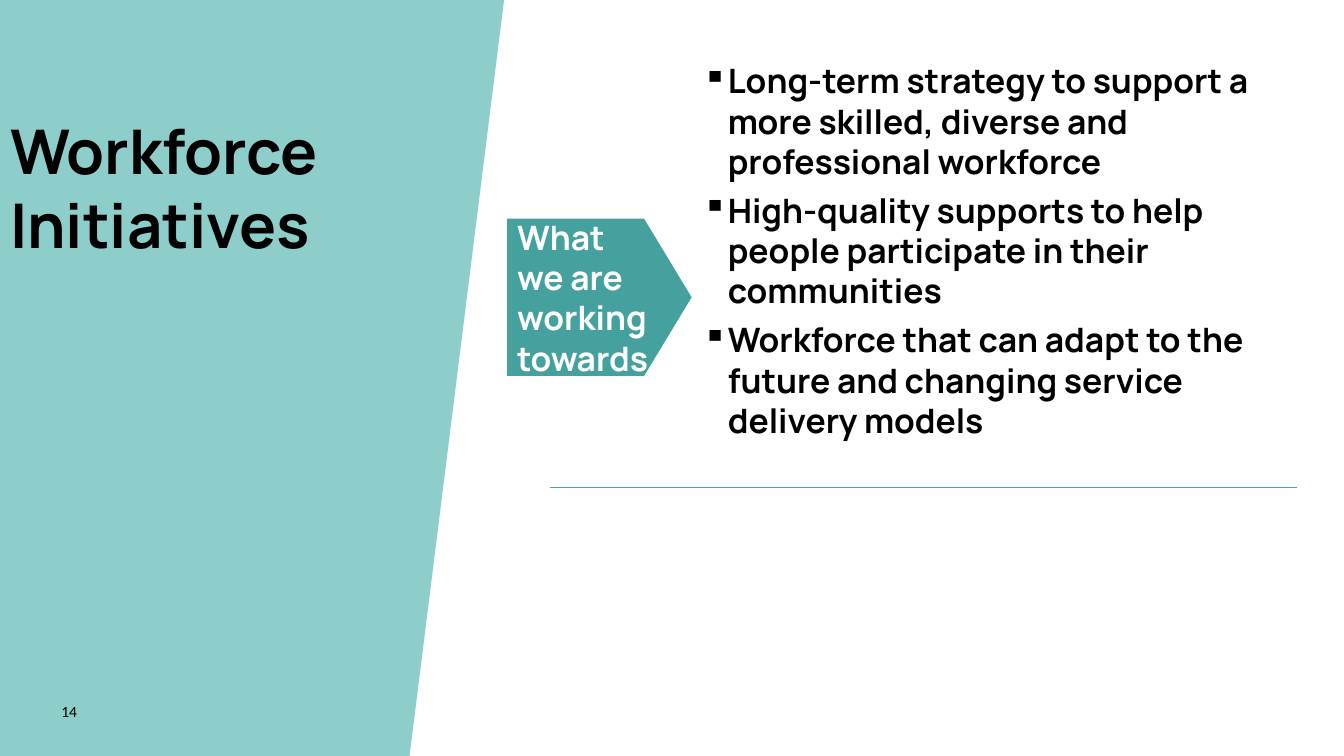
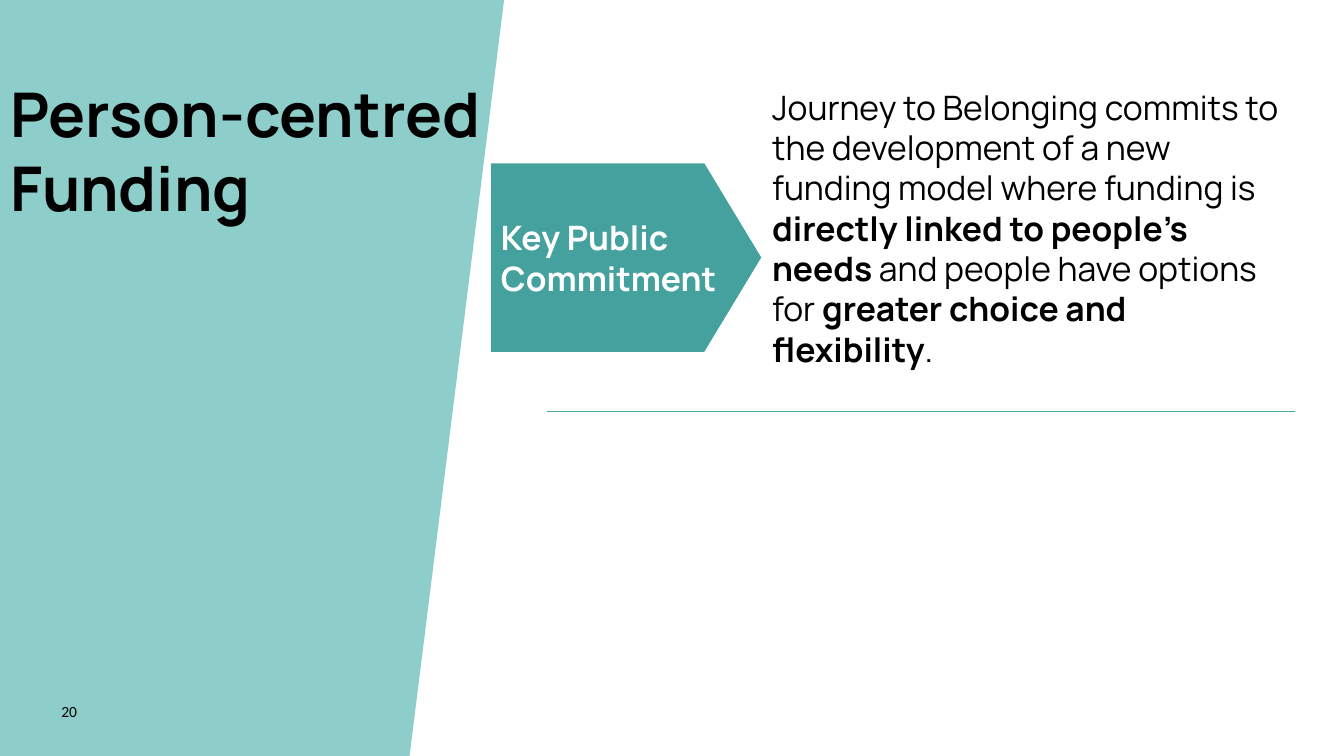
from lxml import etree
from pptx import Presentation
from pptx.dml.color import RGBColor
from pptx.enum.shapes import MSO_CONNECTOR, MSO_SHAPE
from pptx.enum.text import MSO_ANCHOR, MSO_AUTO_SIZE, PP_ALIGN
from pptx.oxml.ns import qn
from pptx.util import Inches, Pt

LINE, ARROW = MSO_CONNECTOR.STRAIGHT, MSO_SHAPE.PENTAGON
TOP, MIDDLE = MSO_ANCHOR.TOP, MSO_ANCHOR.MIDDLE
GROW, FIXED = MSO_AUTO_SIZE.SHAPE_TO_FIT_TEXT, MSO_AUTO_SIZE.NONE
LEFT = PP_ALIGN.LEFT

W, H = 13.33, 7.5
PANEL_TOP = 5.45
RULE_W = 7.41
BLACK, WHITE = "000000", "FFFFFF"
PANEL, TEAL, RULE = "8DCECA", "45A19D", "48A7A2"

TITLE = dict(name="Manrope", size=Pt(44), bold=True, color=BLACK)
BODY = dict(name="Manrope", size=Pt(24), bold=False, color=BLACK)
STRONG = dict(BODY, bold=True)
LABEL = dict(STRONG, color=WHITE)
NUMBER = dict(name="Calibri", size=Pt(11.1), bold=False, color=BLACK)

SLIDES = [
    dict(
        title="Workforce Initiatives", title_box=(0, 1.07, 5.55, 1.58),
        number="14", panel_foot=4.3, rule=(5.45, 4.84),
        label="What we are working towards", arrow=(5.03, 2.17, 1.83, 1.56),
        body_box=(6.87, 0.55, 5.81, 3.9), bullets=True,
        body=[
            [("Long-term strategy to support a more skilled, diverse and professional workforce", STRONG)],
            [("High-quality supports to help people participate in their communities", STRONG)],
            [("Workforce that can adapt to the future and changing service delivery models", STRONG)],
        ],
    ),
    dict(
        title="Person-centred Funding", title_box=(0, 0.7, 5.54, 1.58),
        number="20", panel_foot=4.28, rule=(5.43, 4.08),
        label="Key Public Commitment", arrow=(4.87, 1.62, 2.68, 1.87),
        body_box=(7.56, 0.81, 5.3, 2.93), bullets=False,
        body=[[
            ("Journey to Belonging commits to the development of a new funding model where funding is ", BODY),
            ("directly linked to people’s needs ", STRONG),
            ("and people have options for ", BODY),
            ("greater choice and flexibility", STRONG),
            (".", BODY),
        ]],
    ),
]


def rgb(color):
    return RGBColor.from_string(color)


def place(sp, box):
    sp.left, sp.top, sp.width, sp.height = map(Inches, box)


def paint(sp, color):
    sp.shadow.inherit = False
    sp.fill.solid()
    sp.fill.fore_color.rgb = rgb(color)
    sp.line.fill.background()


def add_bullet(p):
    p.space_after = Pt(6)
    pPr = p._p.get_or_add_pPr()
    pPr.set("marL", str(Inches(0.25)))
    pPr.set("indent", str(-Inches(0.25)))
    color = etree.SubElement(pPr, qn("a:buClr"))
    etree.SubElement(color, qn("a:srgbClr"), val=BLACK)
    etree.SubElement(pPr, qn("a:buChar"), char="▪")


def write(sp, paragraphs, anchor=TOP, autosize=FIXED, bullets=False):
    tf = sp.text_frame
    frame = dict(word_wrap=True, auto_size=autosize, vertical_anchor=anchor)
    for key, value in frame.items():
        setattr(tf, key, value)
    for i, runs in enumerate(paragraphs):
        p = tf.add_paragraph() if i else tf.paragraphs[0]
        p.alignment = LEFT
        if bullets:
            add_bullet(p)
        for text, style in runs:
            r = p.add_run()
            r.text = text
            for key, value in style.items():
                if key == "color":
                    r.font.color.rgb = rgb(value)
                else:
                    setattr(r.font, key, value)


def add_text(s, box, paragraphs, **frame):
    write(s.shapes.add_textbox(*map(Inches, box)), paragraphs, **frame)


def add_panel(s, foot):
    builder = s.shapes.build_freeform(0, 0, scale=Inches(1))
    builder.add_line_segments([(PANEL_TOP, 0.01), (foot, H), (0, H)], close=True)
    panel = builder.convert_to_shape()
    paint(panel, PANEL)
    s.shapes.title.element.addprevious(panel.element)


def add_rule(s, x, y):
    rule = s.shapes.add_connector(LINE, Inches(x), Inches(y), Inches(x + RULE_W), Inches(y))
    rule.line.color.rgb = rgb(RULE)
    rule.line.width = Pt(0.5)
    etree.SubElement(rule.element.spPr, qn("a:effectLst"))


def add_arrow(s, box, label):
    arrow = s.shapes.add_shape(ARROW, *map(Inches, box))
    arrow.adjustments[0] = 0.302
    paint(arrow, TEAL)
    write(arrow, [[(label, LABEL)]], anchor=MIDDLE)


def add_slide(prs, data):
    s = prs.slides.add_slide(prs.slide_layouts[5])
    title = s.shapes.title
    place(title, data["title_box"])
    write(title, [[(data["title"], TITLE)]], autosize=GROW)
    add_panel(s, data["panel_foot"])
    add_text(s, (0.51, 6.86, 0.56, 0.4), [[(data["number"], NUMBER)]], anchor=MIDDLE)
    add_rule(s, *data["rule"])
    add_arrow(s, data["arrow"], data["label"])
    add_text(s, data["body_box"], data["body"], autosize=GROW, bullets=data["bullets"])


def main():
    prs = Presentation()
    prs.slide_width, prs.slide_height = Inches(W), Inches(H)
    for data in SLIDES:
        add_slide(prs, data)
    prs.save("out.pptx")


if __name__ == "__main__":
    main()
